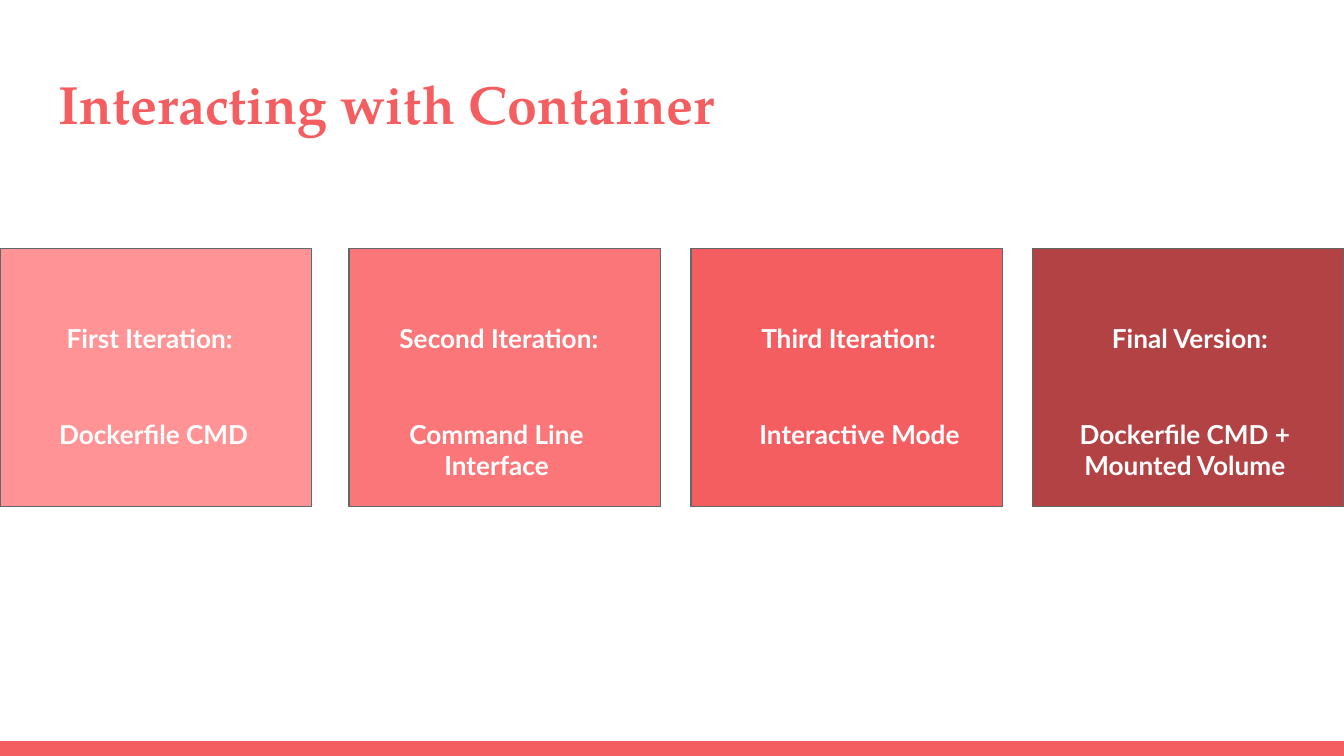
from dataclasses import dataclass

from pptx import Presentation
from pptx.dml.color import RGBColor
from pptx.enum.shapes import MSO_SHAPE
from pptx.enum.text import MSO_ANCHOR, MSO_AUTO_SIZE, PP_ALIGN
from pptx.util import Cm, Pt

RECT = MSO_SHAPE.RECTANGLE
LEFT, CENTER = PP_ALIGN.LEFT, PP_ALIGN.CENTER
TOP = MSO_ANCHOR.TOP
GROW = MSO_AUTO_SIZE.SHAPE_TO_FIT_TEXT

SLIDE_W, SLIDE_H = 25.4, 14.29
BAR_H = 0.28
CARD_TOP, CARD_W, CARD_H = 4.7, 5.89, 4.88
HEAD_TOP, HEAD_W = 5.84, 4.34
BODY_TOP, BODY_W = 7.65, 5.41
ONE_LINE, TWO_LINES = 1.12, 1.7


@dataclass(frozen=True)
class Theme:
    accent: str = "F55E61"
    outline: str = "5E696C"
    card_text: str = "FFFFFF"
    card_fills: tuple = ("FF9395", "FB7679", "F55E61", "B24244")
    title_font: str = "TeX Gyre Pagella"
    body_font: str = "Lato"
    title_size: float = 28.8
    card_size: float = 14
    line_width: float = 0.75


class SlideBuilder:
    def __init__(self, slide, theme):
        self.s = slide
        self.theme = theme

    def rect(self, x, y, w, h, fill, outlined=False):
        sp = self.s.shapes.add_shape(RECT, Cm(x), Cm(y), Cm(w), Cm(h))
        sp.shadow.inherit = False
        sp.fill.solid()
        sp.fill.fore_color.rgb = RGBColor.from_string(fill)
        if outlined:
            sp.line.color.rgb = RGBColor.from_string(self.theme.outline)
            sp.line.width = Pt(self.theme.line_width)
        else:
            sp.line.fill.background()

    def text(self, x, y, w, h, text, font, size, color, align):
        sp = self.s.shapes.add_textbox(Cm(x), Cm(y), Cm(w), Cm(h))
        tf = sp.text_frame
        tf.word_wrap = True
        tf.vertical_anchor = TOP
        tf.margin_left = tf.margin_right = Cm(0.25)
        tf.margin_top = tf.margin_bottom = Cm(0.25)
        p = tf.paragraphs[0]
        p.alignment = align
        r = p.add_run()
        r.text = text
        r.font.name = font
        r.font.size = Pt(size)
        r.font.bold = True
        r.font.color.rgb = RGBColor.from_string(color)
        return tf

    def title(self, text):
        t = self.theme
        self.text(0.86, 1.09, 23.67, 1.73, text, t.title_font, t.title_size, t.accent, LEFT)

    def label(self, x, y, w, h, text):
        t = self.theme
        tf = self.text(x, y, w, h, text, t.body_font, t.card_size, t.card_text, CENTER)
        tf.auto_size = GROW

    def card(self, x, fill, head, head_dx, body, body_dx, body_h):
        """Draw a card; head_dx and body_dx are measured from its left edge."""
        self.rect(x, CARD_TOP, CARD_W, CARD_H, fill, outlined=True)
        self.label(x + head_dx, HEAD_TOP, HEAD_W, ONE_LINE, head)
        self.label(x + body_dx, BODY_TOP, BODY_W, body_h, body)


def main():
    prs = Presentation()
    prs.slide_width, prs.slide_height = Cm(SLIDE_W), Cm(SLIDE_H)
    theme = Theme()
    slide = SlideBuilder(prs.slides.add_slide(prs.slide_layouts[6]), theme)

    slide.rect(0, SLIDE_H - BAR_H, SLIDE_W, BAR_H, theme.accent)
    slide.title("Interacting with Container")

    iterations = [
        (0, "First Iteration:", 0.66, "Dockerfile CMD", 0.2, ONE_LINE),
        (6.6, "Second Iteration:", 0.66, "Command Line Interface", 0.08, TWO_LINES),
        (13.06, "Third Iteration:", 0.81, "Interactive Mode", 0.48, ONE_LINE),
        (SLIDE_W - CARD_W, "Final Version:", 0.81,
         "Dockerfile CMD + Mounted Volume", 0.18, TWO_LINES),
    ]
    for fill, (x, *content) in zip(theme.card_fills, iterations):
        slide.card(x, fill, *content)

    prs.save("out.pptx")


if __name__ == "__main__":
    main()
